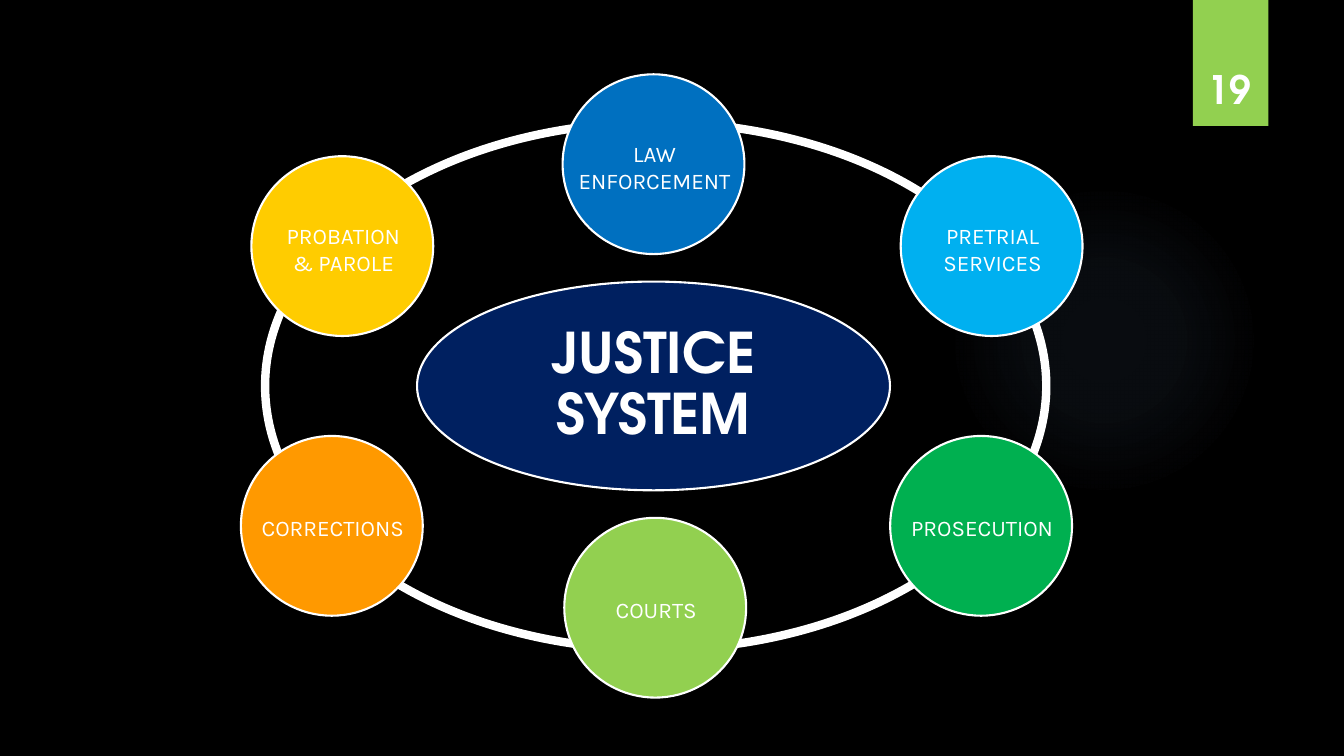
from dataclasses import dataclass

from lxml.etree import SubElement
from pptx import Presentation
from pptx.dml.color import RGBColor
from pptx.enum.shapes import MSO_SHAPE
from pptx.enum.text import MSO_ANCHOR, MSO_AUTO_SIZE, PP_ALIGN
from pptx.oxml.ns import qn
from pptx.util import Inches, Pt

CELL = Inches(1) / 12  # the slide is a grid of 160 columns by 90 rows
COLS, ROWS = 160, 90


@dataclass(frozen=True)
class Theme:
    background: str = "000000"
    white: str = "FFFFFF"
    hub: str = "002060"
    tab: str = "92D050"
    glow: str = "82B1E5"
    heading_font: str = "TeX Gyre Adventor"
    label_font: str = "Karla"
    hub_size: int = 40
    number_size: int = 28
    label_size: int = 16
    ring_width: float = 6
    outline_width: float = 1.5


@dataclass(frozen=True)
class Box:
    """An area in grid columns and rows."""
    col: float
    row: float
    cols: float
    rows: float

    def emu(self) -> list[int]:
        return [round(n * CELL) for n in (self.col, self.row, self.cols, self.rows)]


@dataclass(frozen=True)
class Stage:
    """One circle on the ring; its centre is in grid columns and rows."""
    text: str
    colour: str
    col: float
    row: float
    lines: int = 1


THEME = Theme()
MID_ROW = 45.95
OUTER, INNER = 26.4, 16.65  # rows from the middle to the stage centres
STAGE_COLS, STAGE_ROWS = 21.65, 21.4
LABEL_ROWS = {1: 3.96, 2: 6.84}

STAGES = [
    Stage("LAW ENFORCEMENT", "0070C0", 77.8, MID_ROW - OUTER, 2),
    Stage("PRETRIAL\nSERVICES", "00B0F0", 118.05, MID_ROW - INNER, 2),
    Stage("PROSECUTION", "00B050", 116.8, MID_ROW + INNER),
    Stage("COURTS", "92D050", 78, MID_ROW + OUTER),
    Stage("CORRECTIONS", "FF9900", 39.5, MID_ROW + INNER),
    Stage("PROBATION\n& PAROLE", "FFCC00", 40.75, MID_ROW - INNER, 2),
]


def rgb(colour: str) -> RGBColor:
    return RGBColor.from_string(colour)


def centred(col: float, row: float, cols: float, rows: float) -> Box:
    return Box(col - cols / 2, row - rows / 2, cols, rows)


def add_shape(s, kind: MSO_SHAPE, box: Box, fill: str | None = None, line: float = 0):
    """Draw a shape; without a colour or a line width that part stays empty."""
    sp = s.shapes.add_shape(kind, *box.emu())
    sp.shadow.inherit = False
    if fill:
        sp.fill.solid()
        sp.fill.fore_color.rgb = rgb(fill)
    else:
        sp.fill.background()
    if line:
        sp.line.color.rgb = rgb(THEME.white)
        sp.line.width = Pt(line)
    else:
        sp.line.fill.background()
    return sp


def write(sp, text: str, font: str, size: int, bold: bool = False,
          anchor: MSO_ANCHOR = MSO_ANCHOR.TOP) -> None:
    tf = sp.text_frame
    tf.word_wrap = True
    tf.vertical_anchor = anchor
    tf.text = text
    for p in tf.paragraphs:
        p.alignment = PP_ALIGN.CENTER
        p.font.name = font
        p.font.size = Pt(size)
        p.font.bold = bold
        p.font.color.rgb = rgb(THEME.white)


def add_glow(s) -> None:
    """Draw the faint round light, fading out towards its edge."""
    sp = add_shape(s, MSO_SHAPE.OVAL, Box(112.9, 22, 37, 37))
    sp.fill.gradient()
    grad = sp._element.spPr.find(qn("a:gradFill"))
    for child in list(grad):
        grad.remove(child)
    stops = SubElement(grad, qn("a:gsLst"))
    for position, opacity in ((0, 7), (36, 6), (69, 0)):
        stop = SubElement(stops, qn("a:gs"), pos=str(position * 1000))
        colour = SubElement(stop, qn("a:srgbClr"), val=THEME.glow)
        SubElement(colour, qn("a:alpha"), val=str(opacity * 1000))
    shade = SubElement(grad, qn("a:path"), path="circle")
    SubElement(shade, qn("a:fillToRect"), l="50000", t="50000", r="50000", b="50000")


def add_page_number(s) -> None:
    add_shape(s, MSO_SHAPE.RECTANGLE, Box(142, 0, 9, 15), THEME.tab)
    tb = s.shapes.add_textbox(*Box(140.9, 3.84, 11, 10.1).emu())
    write(tb, "19", THEME.heading_font, THEME.number_size, True, MSO_ANCHOR.BOTTOM)


def add_hub(s) -> None:
    sp = add_shape(s, MSO_SHAPE.OVAL, centred(77.8, MID_ROW, 56.3, 24.85),
                   THEME.hub, THEME.outline_width)
    write(sp, "JUSTICE SYSTEM", THEME.heading_font, THEME.hub_size, True, MSO_ANCHOR.MIDDLE)
    tf = sp.text_frame
    tf.margin_left = tf.margin_right = tf.margin_top = tf.margin_bottom = 0
    tf.paragraphs[0].line_spacing = 0.9


def add_stage(s, stage: Stage) -> None:
    add_shape(s, MSO_SHAPE.OVAL, centred(stage.col, stage.row, STAGE_COLS, STAGE_ROWS),
              stage.colour, THEME.outline_width)
    label = centred(stage.col + 0.12, stage.row, STAGE_COLS, LABEL_ROWS[stage.lines])
    tb = s.shapes.add_textbox(*label.emu())
    write(tb, stage.text, THEME.label_font, THEME.label_size)
    tb.text_frame.auto_size = MSO_AUTO_SIZE.SHAPE_TO_FIT_TEXT


def main() -> None:
    prs = Presentation()
    prs.slide_width, prs.slide_height = round(COLS * CELL), round(ROWS * CELL)
    s = prs.slides.add_slide(prs.slide_layouts[6])
    s.background.fill.solid()
    s.background.fill.fore_color.rgb = rgb(THEME.background)

    add_glow(s)
    add_page_number(s)
    add_shape(s, MSO_SHAPE.OVAL, centred(78.06, MID_ROW, 93, 62.76), line=THEME.ring_width)
    add_hub(s)
    for stage in STAGES:
        add_stage(s, stage)
    prs.save("out.pptx")


if __name__ == "__main__":
    main()
